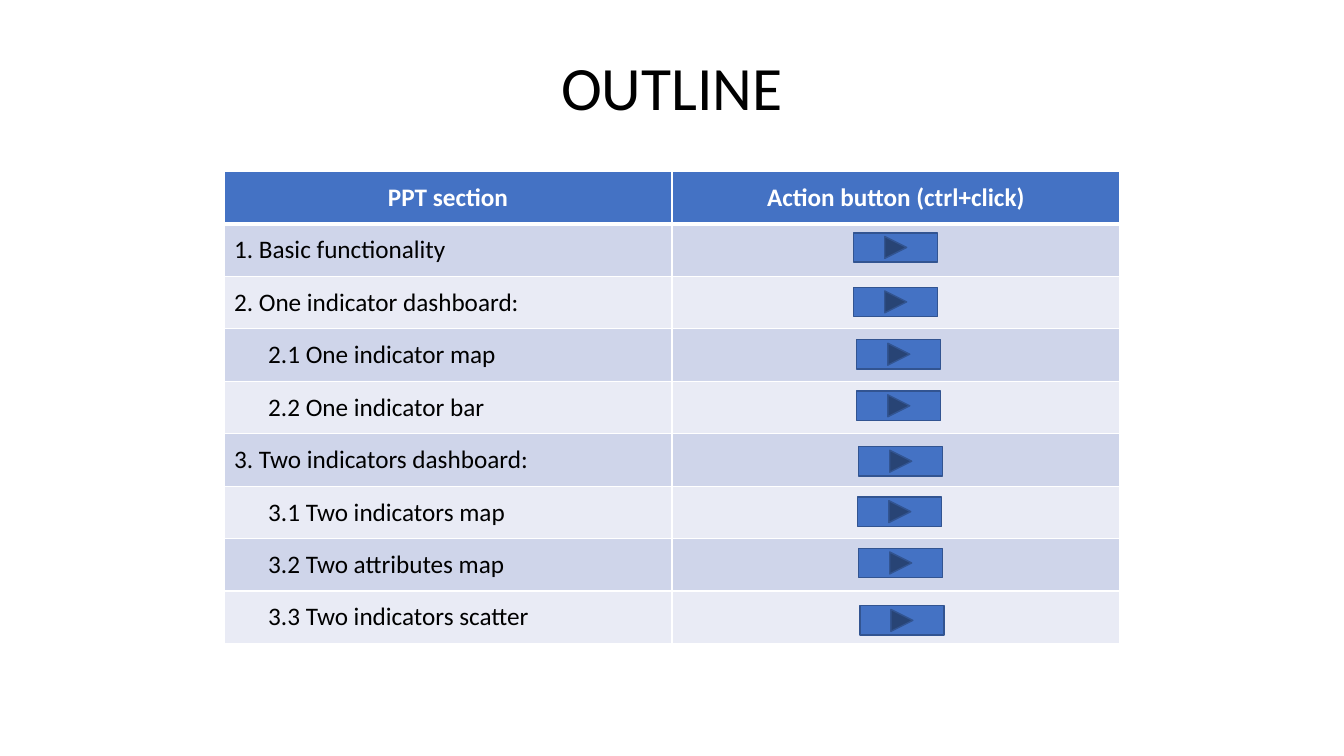
from dataclasses import dataclass

from pptx import Presentation
from pptx.dml.color import RGBColor
from pptx.enum.shapes import MSO_SHAPE
from pptx.enum.text import MSO_ANCHOR, PP_ALIGN
from pptx.oxml.ns import qn
from pptx.slide import Slide
from pptx.table import _Cell
from pptx.text.text import _Paragraph
from pptx.util import Pt
from lxml import etree

FORWARD_BUTTON = MSO_SHAPE.ACTION_BUTTON_FORWARD_OR_NEXT
MIDDLE = MSO_ANCHOR.MIDDLE
LEFT, CENTER = PP_ALIGN.LEFT, PP_ALIGN.CENTER


@dataclass(frozen=True)
class Theme:
    font: str = "Calibri"
    title_size: float = 44
    table_size: float = 18
    text: str = "000000"
    white: str = "FFFFFF"
    accent: str = "4472C4"
    button_line: str = "325491"
    bands: tuple[str, str] = ("CFD5EA", "E9EBF5")


@dataclass(frozen=True)
class Section:
    label: str
    button_left: float
    button_top: float
    level: int = 0


THEME = Theme()
SLIDE_W, SLIDE_H = 960, 540
TABLE_LEFT, TABLE_TOP = 160, 122.4
COL_W, ROW_H = 320, 37.5
CELL_MARGIN, LEVEL_INDENT = 7.2, 24.4
BUTTON_W, BUTTON_H = 60, 20.9

HEADERS = ("PPT section", "Action button (ctrl+click)")
SECTIONS = (
    Section("1. Basic functionality", 609.8, 166.3),
    Section("2. One indicator dashboard:", 609.8, 205.2),
    Section("2.1 One indicator map", 612, 242.6, 1),
    Section("2.2 One indicator bar", 612, 279.4, 1),
    Section("3. Two indicators dashboard:", 613.4, 319),
    Section("3.1 Two indicators map", 612.7, 355, 1),
    Section("3.2 Two attributes map", 613.4, 391.7, 1),
    Section("3.3 Two indicators scatter", 614.2, 432.7, 1),
)


def rgb(color: str) -> RGBColor:
    return RGBColor.from_string(color)


def write(p: _Paragraph, text: str, size: float, color: str,
          align: PP_ALIGN, bold: bool = False) -> None:
    p.text = text
    p.alignment = align
    p.font.name = THEME.font
    p.font.size = Pt(size)
    p.font.bold = bold
    p.font.color.rgb = rgb(color)


def set_borders(cell: _Cell, top: float, bottom: float) -> None:
    """Give a cell white borders; the sides are one point wide."""
    tc_pr = cell._tc.get_or_add_tcPr()
    edges = (("a:lnL", 1), ("a:lnR", 1), ("a:lnT", top), ("a:lnB", bottom))
    for i, (tag, width) in enumerate(edges):
        ln = etree.Element(qn(tag), w=str(Pt(width)))
        fill = etree.SubElement(ln, qn("a:solidFill"))
        etree.SubElement(fill, qn("a:srgbClr"), val=THEME.white)
        tc_pr.insert(i, ln)


def style_cell(cell: _Cell, fill: str, top: float, bottom: float) -> None:
    cell.fill.solid()
    cell.fill.fore_color.rgb = rgb(fill)
    cell.vertical_anchor = MIDDLE
    set_borders(cell, top, bottom)


def add_title(s: Slide, text: str) -> None:
    tf = s.shapes.add_textbox(0, Pt(12.2), Pt(SLIDE_W), Pt(104.4)).text_frame
    tf.word_wrap = True
    tf.vertical_anchor = MIDDLE
    p = tf.paragraphs[0]
    write(p, text, THEME.title_size, THEME.text, CENTER)
    p.line_spacing = 0.9


def add_outline_table(s: Slide) -> None:
    n_rows, n_cols = len(SECTIONS) + 1, len(HEADERS)
    table = s.shapes.add_table(
        n_rows, n_cols, Pt(TABLE_LEFT), Pt(TABLE_TOP),
        Pt(n_cols * COL_W), Pt(n_rows * ROW_H)).table
    for column in table.columns:
        column.width = Pt(COL_W)
    for row in table.rows:
        row.height = Pt(ROW_H)

    for cell, header in zip(table.rows[0].cells, HEADERS):
        style_cell(cell, THEME.accent, 1, 3)
        write(cell.text_frame.paragraphs[0], header, THEME.table_size,
              THEME.white, CENTER, bold=True)

    for i, section in enumerate(SECTIONS):
        for cell in table.rows[i + 1].cells:
            style_cell(cell, THEME.bands[i % 2], 1 if i else 3, 1)
        label = table.cell(i + 1, 0)
        label.margin_left = Pt(CELL_MARGIN + section.level * LEVEL_INDENT)
        write(label.text_frame.paragraphs[0], section.label,
              THEME.table_size, THEME.text, LEFT)


def add_button(s: Slide, section: Section) -> None:
    sp = s.shapes.add_shape(
        FORWARD_BUTTON, Pt(section.button_left), Pt(section.button_top),
        Pt(BUTTON_W), Pt(BUTTON_H))
    sp.shadow.inherit = False
    sp.fill.solid()
    sp.fill.fore_color.rgb = rgb(THEME.accent)
    sp.line.color.rgb = rgb(THEME.button_line)
    sp.line.width = Pt(1)


def main() -> None:
    prs = Presentation()
    prs.slide_width, prs.slide_height = Pt(SLIDE_W), Pt(SLIDE_H)
    s = prs.slides.add_slide(prs.slide_layouts[6])
    add_title(s, "OUTLINE")
    add_outline_table(s)
    for section in SECTIONS:
        add_button(s, section)
    prs.save("out.pptx")


if __name__ == "__main__":
    main()
